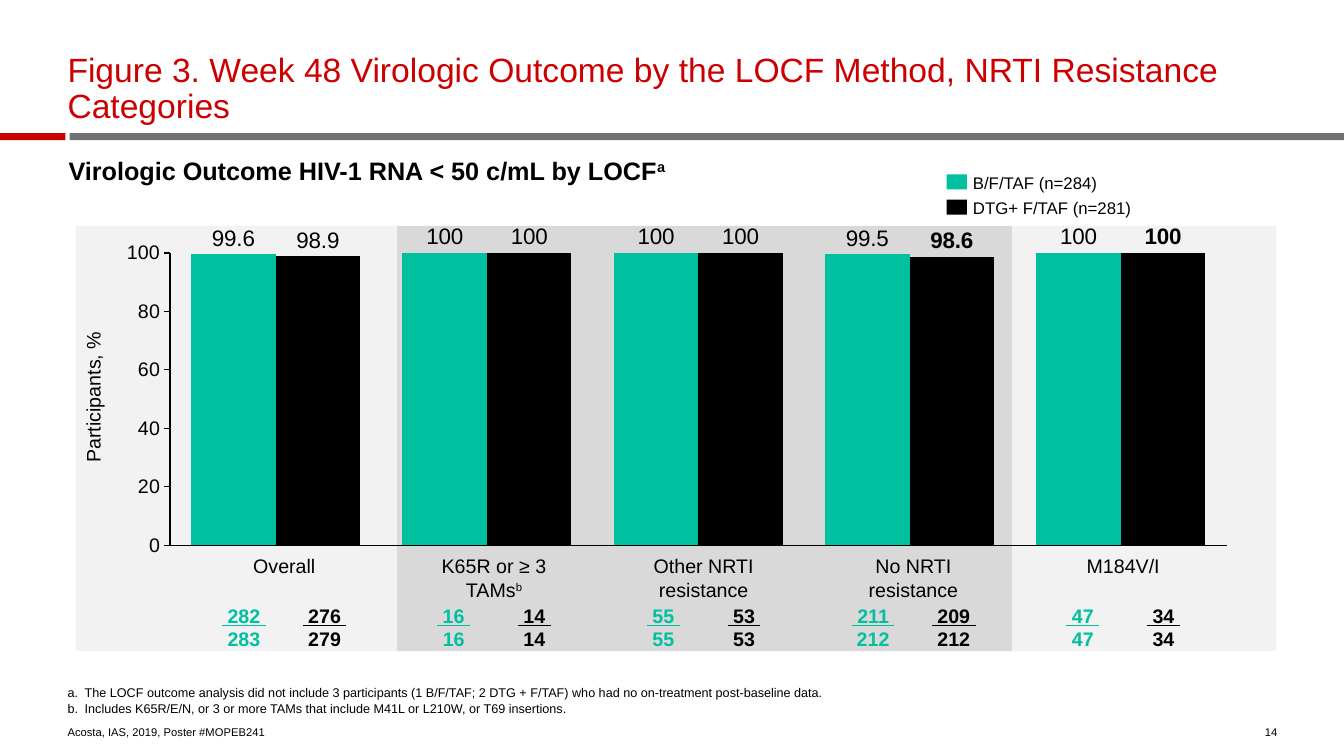
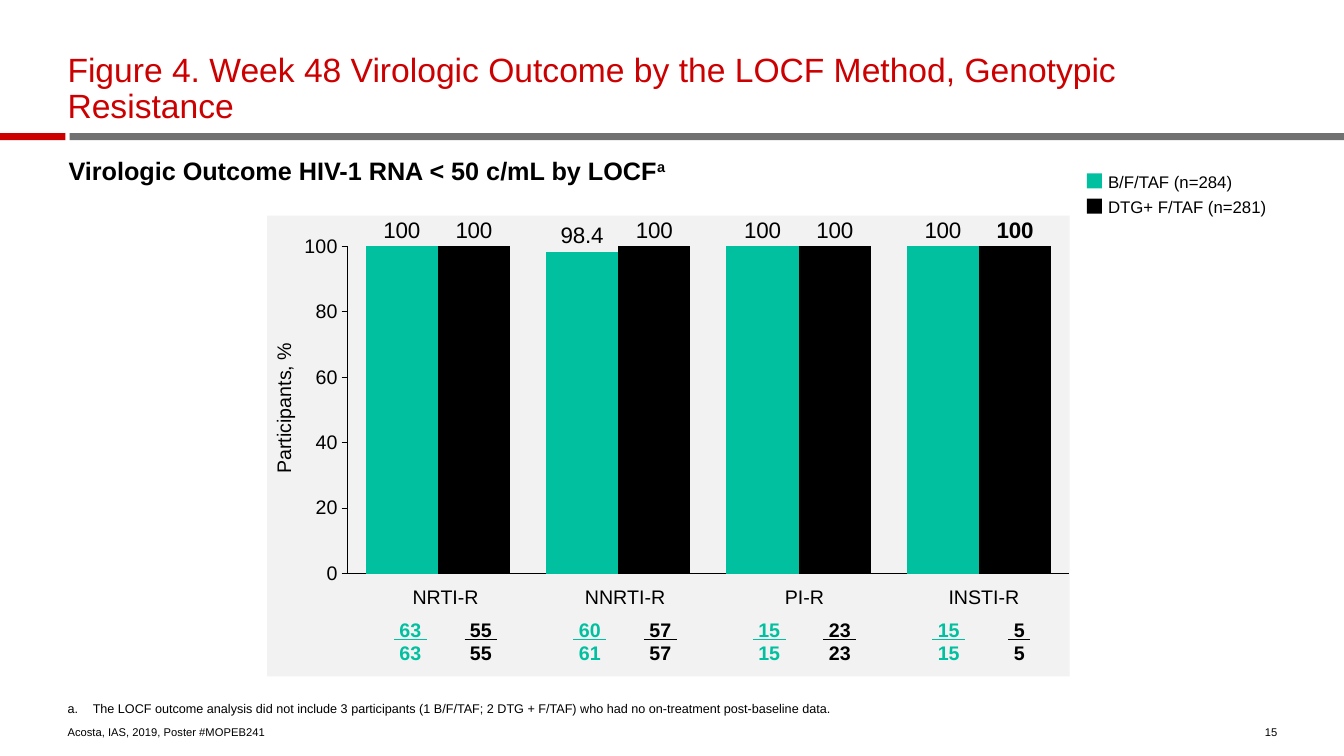
"""Build two slides of clustered column charts with participant fractions."""
from lxml import etree
from pptx import Presentation
from pptx.chart.data import CategoryChartData
from pptx.dml.color import RGBColor
from pptx.enum.chart import XL_CHART_TYPE as CHART
from pptx.enum.chart import XL_LABEL_POSITION as LABEL_POS
from pptx.enum.chart import XL_TICK_LABEL_POSITION as TICK_LABEL
from pptx.enum.chart import XL_TICK_MARK as TICK
from pptx.enum.shapes import MSO_SHAPE as SHAPE
from pptx.enum.text import MSO_ANCHOR as ANCHOR
from pptx.enum.text import PP_ALIGN as ALIGN
from pptx.oxml.ns import qn
from pptx.util import Inches, Pt

FONT = "Arial"
RED = RGBColor(0xCC, 0x00, 0x00)
GRAY = RGBColor(0x71, 0x71, 0x71)
LIGHT = RGBColor(0xF2, 0xF2, 0xF2)
MID = RGBColor(0xD9, 0xD9, 0xD9)
TEAL = RGBColor(0x00, 0xC0, 0xA0)
BLACK = RGBColor(0x00, 0x00, 0x00)
FIGURE_SPACE = " "

ARMS = [("B/F/TAF (n=284)", TEAL), ("DTG+ F/TAF (n=281)", BLACK)]
SUBTITLE = "Virologic Outcome HIV-1 RNA < 50 c/mL by LOCF^a"
SOURCE = "Acosta, IAS, 2019, Poster #MOPEB241"
LOCF_NOTE = ("The LOCF outcome analysis did not include 3 participants "
             "(1 B/F/TAF; 2 DTG + F/TAF) who had no on-treatment post-baseline data.")

SLIDES = [
    {
        "title": "Figure 4. Week 48 Virologic Outcome by the LOCF Method, "
                 "Genotypic Resistance".replace("4.", "3.").replace(
                     "Genotypic Resistance", "NRTI Resistance Categories"),
        "number": "14",
        "notes": [LOCF_NOTE, "Includes K65R/E/N, or 3 or more TAMs that include "
                             "M41L or L210W, or T69 insertions."],
        "note_indent": 0.17,
        "panels": [(0.75, 2.24, 3.19, 4.22, LIGHT), (3.94, 2.24, 6.1, 4.22, MID),
                   (10.04, 2.24, 2.62, 4.22, LIGHT)],
        "chart": (1.1, 2.23, 11.07, 3.42),
        "axis_inset": 0.59,
        "axis_title": (0.92, 3.94),
        "legend": (9.39, 1.73, 0.2),
        "groups": [
            ("Overall", (99.6, 98.9), ((282, 283), (276, 279))),
            ("K65R or ≥ 3 TAMs^b", (100, 100), ((16, 16), (14, 14))),
            ("Other NRTI resistance", (100, 100), ((55, 55), (53, 53))),
            ("No NRTI resistance", (99.5, 98.6), ((211, 212), (209, 212))),
            ("M184V/I", (100, 100), ((47, 47), (34, 34))),
        ],
        "bold_labels": [3, 4],
        "first_center": 2.82, "pitch": 2.08, "half_gap": 0.4,
        "label_top": 5.45, "fraction_top": 5.94,
    },
    {
        "title": "Figure 4. Week 48 Virologic Outcome by the LOCF Method, "
                 "Genotypic Resistance",
        "number": "15",
        "notes": [LOCF_NOTE],
        "note_indent": 0.25,
        "panels": [(2.65, 2.14, 7.96, 4.57, LIGHT)],
        "chart": (2.95, 2.13, 7.66, 3.83),
        "axis_inset": 0.5,
        "axis_title": (2.81, 4.05),
        "legend": (10.78, 1.72, 0.15),
        "groups": [
            ("NRTI-R", (100, 100), ((63, 63), (55, 55))),
            ("NNRTI-R", (98.4, 100), ((60, 61), (57, 57))),
            ("PI-R", (100, 100), ((15, 15), (23, 23))),
            ("INSTI-R", (100, 100), ((15, 15), (5, 5))),
        ],
        "bold_labels": [3],
        "first_center": 4.42, "pitch": 1.78, "half_gap": 0.35,
        "label_top": 5.75, "fraction_top": 6.08,
    },
]
SLIDES[0]["title"] = ("Figure 3. Week 48 Virologic Outcome by the LOCF Method, "
                      "NRTI Resistance Categories")


def add_rect(s, x, y, w, h, color):
    sp = s.shapes.add_shape(SHAPE.RECTANGLE, *map(Inches, (x, y, w, h)))
    sp.shadow.inherit = False
    sp.fill.solid()
    sp.fill.fore_color.rgb = color
    sp.line.fill.background()


def add_text(s, box, lines, size, color=BLACK, bold=False, align=ALIGN.LEFT,
             anchor=ANCHOR.TOP, spacing=1.0):
    sp = s.shapes.add_textbox(*map(Inches, box))
    tf = sp.text_frame
    tf.word_wrap = True
    tf.vertical_anchor = anchor
    tf.margin_left = tf.margin_right = tf.margin_top = tf.margin_bottom = 0
    for i, line in enumerate(lines):
        p = tf.paragraphs[0] if i == 0 else tf.add_paragraph()
        p.alignment, p.line_spacing = align, spacing
        p.font.name, p.font.size, p.font.bold = FONT, Pt(size), bold
        p.font.color.rgb = color
        base, _, superscript = line.partition("^")
        p.add_run().text = base
        if superscript:
            r = p.add_run()
            r.text = superscript
            r.font._element.set("baseline", "30000")
    return sp


def add_frame(s, data):
    add_rect(s, 0.69, 1.32, 12.65, 0.07, GRAY)
    add_rect(s, 0, 1.32, 0.65, 0.07, RED)
    add_text(s, (0.67, 0.51, 12, 0.74), [data["title"]], 24, RED,
             anchor=ANCHOR.BOTTOM, spacing=0.9)
    add_text(s, (0.68, 1.54, 8, 0.3), [SUBTITLE], 18, bold=True, anchor=ANCHOR.BOTTOM)
    add_text(s, (0.67, 7.15, 4.44, 0.18), [SOURCE], 8, anchor=ANCHOR.BOTTOM)
    add_text(s, (12.31, 7.15, 0.36, 0.18), [data["number"]], 8,
             align=ALIGN.RIGHT, anchor=ANCHOR.BOTTOM)
    notes = add_text(s, (0.67, 6.8, 10.38, 0.3), data["notes"], 9, anchor=ANCHOR.BOTTOM)
    indent = Inches(data["note_indent"])
    for p in notes.text_frame.paragraphs:
        props = p._p.get_or_add_pPr()
        props.set("marL", str(indent))
        props.set("indent", str(-indent))
        bullet = etree.Element(qn("a:buAutoNum"), type="alphaLcPeriod")
        props.find(qn("a:defRPr")).addprevious(bullet)


def set_plot_layout(chart, x):
    plot_area = chart._chartSpace.chart.plotArea
    for old in plot_area.findall(qn("c:layout")):
        plot_area.remove(old)
    layout = etree.Element(qn("c:layout"))
    manual = etree.SubElement(layout, qn("c:manualLayout"))
    for tag, val in [("layoutTarget", "inner"), ("xMode", "edge"), ("yMode", "edge"),
                     ("x", x), ("y", 0.082), ("w", 1 - x), ("h", 0.848)]:
        etree.SubElement(manual, qn(f"c:{tag}"), val=str(val))
    plot_area.insert(0, layout)


def add_columns(s, data):
    chart_data = CategoryChartData()
    chart_data.categories = [label.replace("^", "") for label, _, _ in data["groups"]]
    for i, (name, _) in enumerate(ARMS):
        chart_data.add_series(name, [values[i] for _, values, _ in data["groups"]])
    box = map(Inches, data["chart"])
    chart = s.shapes.add_chart(CHART.COLUMN_CLUSTERED, *box, chart_data).chart
    chart.has_legend = chart.has_title = False
    chart.font.name, chart.font.size = FONT, Pt(14)
    chart.font.color.rgb = BLACK
    set_plot_layout(chart, round(data["axis_inset"] / data["chart"][2], 3))

    for axis in (chart.category_axis, chart.value_axis):
        axis.has_major_gridlines = False
        axis.minor_tick_mark = TICK.NONE
        axis.format.line.color.rgb = BLACK
        axis.format.line.width = Pt(0.75)
    chart.category_axis.major_tick_mark = TICK.NONE
    chart.category_axis.tick_label_position = TICK_LABEL.NONE
    axis = chart.value_axis
    axis.major_tick_mark = TICK.OUTSIDE
    axis.minimum_scale, axis.maximum_scale, axis.major_unit = 0, 100, 20

    plot = chart.plots[0]
    plot.gap_width, plot.overlap, plot.vary_by_categories = 50, 0, False
    for series, (_, color) in zip(plot.series, ARMS):
        series.format.fill.solid()
        series.format.fill.fore_color.rgb = color
        labels = series.data_labels
        labels.show_value = True
        labels.position = LABEL_POS.OUTSIDE_END
        labels.font.size = Pt(16)
    for i in data["bold_labels"]:
        label = plot.series[1].points[i].data_label
        label.font.size, label.font.bold = Pt(16), True
        label.position = LABEL_POS.OUTSIDE_END


def add_legend(s, x, y, width):
    for i, (name, color) in enumerate(ARMS):
        top = y + 0.25 * i
        add_rect(s, x, top, width, 0.15, color)
        add_text(s, (x + width + 0.06, top - 0.02, 1.8, 0.2), [name], 12)


def add_group_labels(s, data):
    for i, (label, _, fractions) in enumerate(data["groups"]):
        center = data["first_center"] + i * data["pitch"]
        add_text(s, (center - 0.7, data["label_top"] + 0.05, 1.4, 0.47), [label], 14,
                 align=ALIGN.CENTER)
        for side, (count, total), (_, color) in zip((-1, 1), fractions, ARMS):
            left = center + side * data["half_gap"] - 0.42
            lines = [f"{FIGURE_SPACE}{count}{FIGURE_SPACE}", str(total)]
            sp = add_text(s, (left, data["fraction_top"] + 0.05, 0.84, 0.47), lines, 14,
                          color, bold=True, align=ALIGN.CENTER)
            sp.text_frame.paragraphs[0].runs[0].font.underline = True


def main():
    prs = Presentation()
    prs.slide_width, prs.slide_height = Inches(13.33), Inches(7.5)
    for data in SLIDES:
        s = prs.slides.add_slide(prs.slide_layouts[6])
        add_frame(s, data)
        for panel in data["panels"]:
            add_rect(s, *panel)
        add_columns(s, data)
        x, y = data["axis_title"]
        sp = add_text(s, (x - 1.35, y - 0.13, 2.7, 0.26), ["Participants, %"], 14,
                      align=ALIGN.CENTER, anchor=ANCHOR.MIDDLE)
        sp.rotation = 270
        add_legend(s, *data["legend"])
        add_group_labels(s, data)
    prs.save("out.pptx")


if __name__ == "__main__":
    main()
